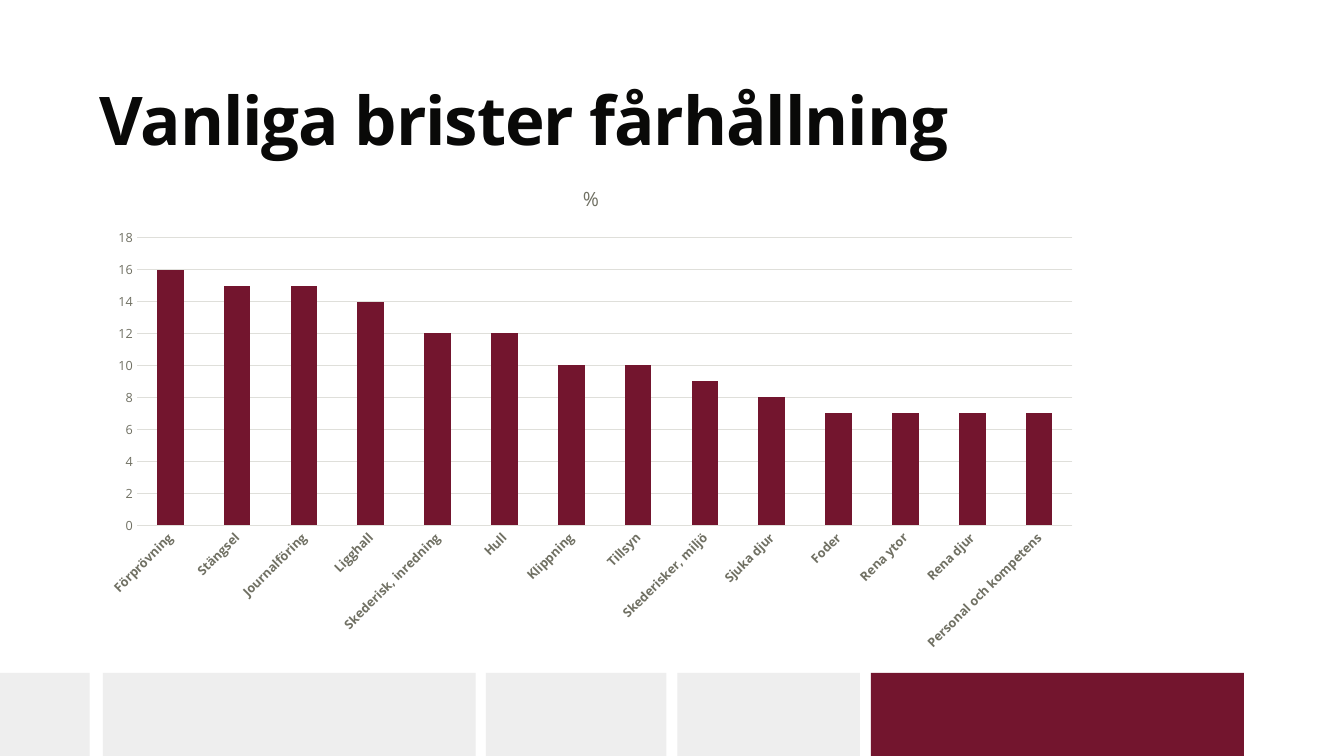
from lxml import etree
from pptx import Presentation
from pptx.chart.data import CategoryChartData
from pptx.dml.color import RGBColor
from pptx.enum.chart import XL_CHART_TYPE, XL_TICK_MARK
from pptx.enum.shapes import MSO_SHAPE
from pptx.enum.text import MSO_ANCHOR
from pptx.util import Pt

FONT = "Open Sans"
WINE = "73152E"
LIGHT_GREY = "EEEEEE"
LABEL_GREY = "707063"
SHORTCOMINGS = [
    ("Förprövning", 16),
    ("Stängsel", 15),
    ("Journalföring", 15),
    ("Ligghall", 14),
    ("Skederisk, inredning", 12),
    ("Hull", 12),
    ("Klippning", 10),
    ("Tillsyn", 10),
    ("Skederisker, miljö", 9),
    ("Sjuka djur", 8),
    ("Foder", 7),
    ("Rena ytor", 7),
    ("Rena djur", 7),
    ("Personal och kompetens", 7),
]
FOOTER_BLOCKS = [
    (-0.72, 64.8, LIGHT_GREY),
    (73.44, 266.4, LIGHT_GREY),
    (347.04, 128.9, LIGHT_GREY),
    (483.84, 130.3, LIGHT_GREY),
    (622.08, 266.4, WINE),
]


def color(hex_string):
    """Turn a hex string into a colour."""
    return RGBColor.from_string(hex_string)


def style_font(font, size, hex_string, bold=False):
    """Set typeface, size, colour and weight of a font."""
    font.name = FONT
    font.size = Pt(size)
    font.bold = bold
    font.color.rgb = color(hex_string)


def add_footer(slide, left, top, height):
    """Add the row of blocks along the bottom edge."""
    for offset, width, fill in FOOTER_BLOCKS:
        block = slide.shapes.add_shape(
            MSO_SHAPE.RECTANGLE, Pt(left + offset), Pt(top), Pt(width), Pt(height)
        )
        block.shadow.inherit = False
        block.fill.solid()
        block.fill.fore_color.rgb = color(fill)
        block.line.fill.background()


def add_title(slide, text, left, top, width, height):
    """Add the large bold heading."""
    box = slide.shapes.add_textbox(Pt(left), Pt(top), Pt(width), Pt(height))
    text_frame = box.text_frame
    text_frame.word_wrap = True
    text_frame.vertical_anchor = MSO_ANCHOR.TOP
    text_frame.margin_top = text_frame.margin_bottom = Pt(1)
    text_frame.text = text
    paragraph = text_frame.paragraphs[0]
    paragraph.line_spacing = 0.9
    run = paragraph.runs[0]
    style_font(run.font, 48, "090908", bold=True)
    run.font._element.set("spc", "-80")


def style_axis(axis, bold):
    """Give an axis grey labels and no line or tick marks."""
    axis.major_tick_mark = XL_TICK_MARK.NONE
    axis.minor_tick_mark = XL_TICK_MARK.NONE
    axis.format.line.fill.background()
    style_font(axis.tick_labels.font, 9, LABEL_GREY, bold)


def add_shortcomings_chart(slide, left, top, width, height):
    """Add the column chart of common shortcomings in percent."""
    names, shares = zip(*SHORTCOMINGS)
    chart_data = CategoryChartData()
    chart_data.categories = names
    chart_data.add_series("%", shares)
    chart = slide.shapes.add_chart(
        XL_CHART_TYPE.COLUMN_CLUSTERED,
        Pt(left), Pt(top), Pt(width), Pt(height), chart_data,
    ).chart
    style_font(chart.font, 10, "1A1A17")
    chart.has_legend = False
    chart.has_title = True
    chart.chart_title.include_in_layout = False
    chart.chart_title.text_frame.text = "%"
    title_run = chart.chart_title.text_frame.paragraphs[0].runs[0]
    style_font(title_run.font, 14, LABEL_GREY)

    plot = chart.plots[0]
    plot.gap_width = 150
    plot.vary_by_categories = False
    series_fill = plot.series[0].format.fill
    series_fill.solid()
    series_fill.fore_color.rgb = color(WINE)

    style_axis(chart.category_axis, bold=True)
    label_body = chart.category_axis._element.find(".//{*}txPr/{*}bodyPr")
    label_body.set("rot", "-2700000")
    label_body.set("vert", "horz")

    value_axis = chart.value_axis
    style_axis(value_axis, bold=False)
    value_axis.minimum_scale = 0
    value_axis.maximum_scale = 18
    value_axis.major_unit = 2
    value_axis.has_major_gridlines = True
    grid_line = value_axis.major_gridlines.format.line
    grid_line.width = Pt(0.75)
    grid_line.color.rgb = color("DFDFDA")


def main():
    """Build and save the slide."""
    presentation = Presentation()
    presentation.slide_width = Pt(960)
    presentation.slide_height = Pt(540)
    slide = presentation.slides.add_slide(presentation.slide_layouts[6])
    add_footer(slide, 0, 480.6, 60.5)
    add_title(slide, "Vanliga brister fårhållning", 64, 61.2, 823, 56.2)
    add_shortcomings_chart(slide, 64, 117.4, 716.4, 355)
    presentation.save("out.pptx")


if __name__ == "__main__":
    main()
